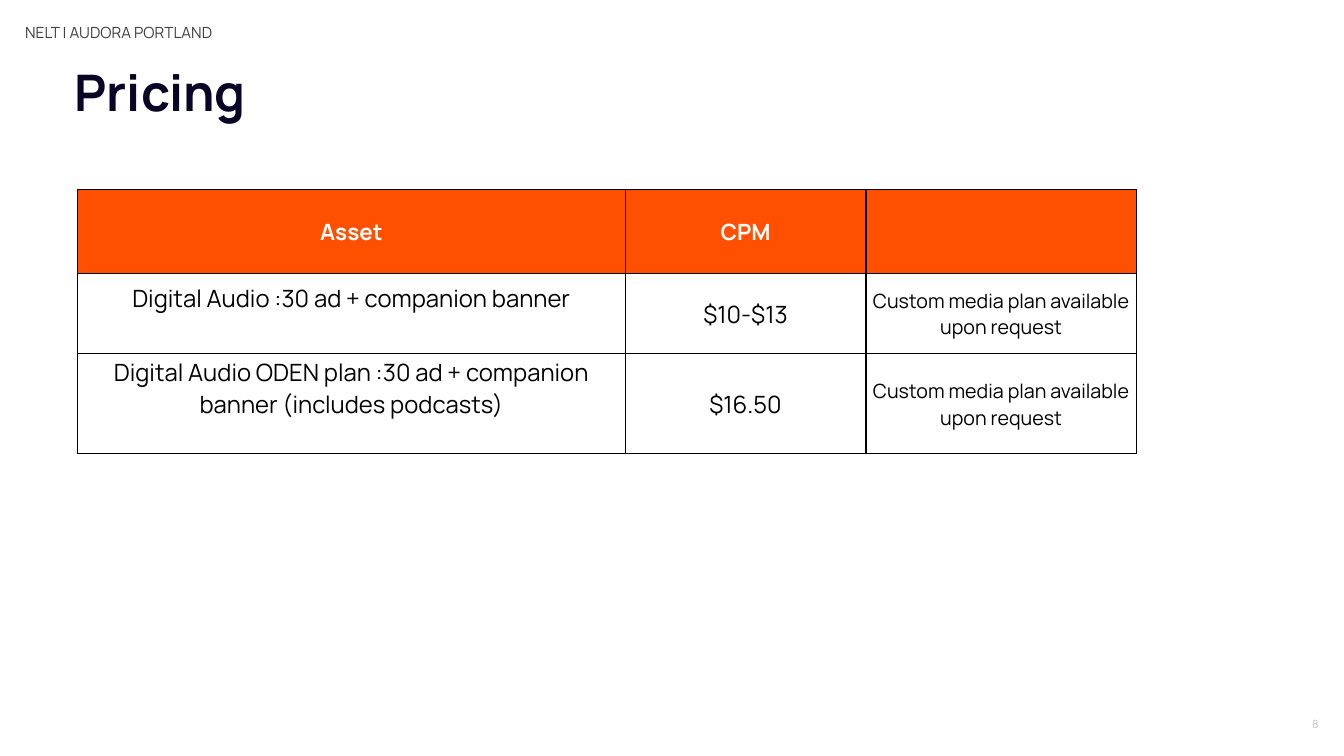
from pptx import Presentation
from pptx.dml.color import RGBColor as Rgb
from pptx.enum.text import MSO_ANCHOR as Anchor, MSO_AUTO_SIZE as Auto, PP_ALIGN as Align
from pptx.oxml.ns import qn
from pptx.util import Inches, Pt
from lxml.etree import SubElement as Sub

INK = {"title": "090527", "head": "FE5000", "white": "FFFFFF",
       "black": "000000", "label": "3F3F3F", "page": "C1C0BD"}
COLS = [5.43, 2.39, 2.68]
ROWS = [0.83, 0.8, 0.99]
CELLS = [
    ["Asset", "CPM", ""],
    ["Digital Audio :30 ad + companion banner", "$10-$13",
     "Custom media plan available upon request"],
    ["Digital Audio ODEN plan :30 ad + companion banner (includes podcasts)",
     "$16.50", "Custom media plan available upon request"],
]
SIZES = [17, 17, 14]


def style(para, size, ink, align, bold=False):
    para.alignment = align
    para.font.size = Pt(size)
    for run in para.runs:
        run.font.name = "Manrope"
        run.font.size = Pt(size)
        run.font.bold = bold
        run.font.color.rgb = Rgb.from_string(INK[ink])


def write(shape, box, text, size, ink, align=Align.LEFT,
          anchor=Anchor.TOP, bold=False, pitch=1.0):
    shape.left, shape.top, shape.width, shape.height = map(Inches, box)
    frame = shape.text_frame
    frame.word_wrap = True
    frame.auto_size = Auto.NONE
    frame.vertical_anchor = anchor
    frame.margin_left = frame.margin_right = 0
    frame.margin_top = frame.margin_bottom = 0
    frame.text = text
    para = frame.paragraphs[0]
    para.line_spacing = pitch
    para.space_before = Pt(0)
    style(para, size, ink, align, bold)
    return para


def add_title(slide, box):
    write(slide.shapes.title, box, "Pricing", 36, "title", bold=True, pitch=0.8)


def add_label(slide, box):
    para = write(slide.placeholders[1], box, "NELT | AUDORA PORTLAND",
                 11, "label", pitch=0.9)
    props = para._p.get_or_add_pPr()
    props.set("marL", "0")
    props.set("indent", "0")
    Sub(props, qn("a:buNone"))


def add_page(slide, box):
    shape = slide.shapes.add_textbox(*map(Inches, box))
    write(shape, box, "8", 8, "page", Align.RIGHT, Anchor.BOTTOM)


def frame_cell(cell):
    props = cell._tc.get_or_add_tcPr()
    for side in ("lnL", "lnR", "lnT", "lnB"):
        line = Sub(props, qn("a:" + side), w=str(Pt(1)))
        fill = Sub(line, qn("a:solidFill"))
        Sub(fill, qn("a:srgbClr"), val=INK["black"])


def add_prices(slide, left, top):
    box = (left, top, sum(COLS), sum(ROWS))
    table = slide.shapes.add_table(len(ROWS), len(COLS), *map(Inches, box)).table
    table.first_row = table.horz_banding = False
    for col, width in zip(table.columns, COLS):
        col.width = Inches(width)
    for y, (row, height) in enumerate(zip(table.rows, ROWS)):
        row.height = Inches(height)
        head = y == 0
        for x, cell in enumerate(row.cells):
            cell.text = CELLS[y][x]
            cell.vertical_anchor = Anchor.MIDDLE
            cell.margin_left = cell.margin_right = cell.margin_top = Inches(0.01)
            cell.margin_bottom = Inches(0.31 if x == 0 and not head else 0)
            style(cell.text_frame.paragraphs[0], 16 if head else SIZES[x],
                  "white" if head else "black", Align.CENTER, head)
            frame_cell(cell)
            if head:
                cell.fill.solid()
                cell.fill.fore_color.rgb = Rgb.from_string(INK["head"])
            else:
                cell.fill.background()


def main():
    deck = Presentation()
    deck.slide_width, deck.slide_height = Inches(13.33), Inches(7.5)
    slide = deck.slides.add_slide(deck.slide_layouts[1])
    add_title(slide, (0.74, 0.72, 7.47, 0.33))
    add_prices(slide, 0.77, 1.88)
    add_label(slide, (0.25, 0.25, 7.96, 0.25))
    add_page(slide, (12.83, 7, 0.25, 0.25))
    deck.save("out.pptx")


if __name__ == "__main__":
    main()
